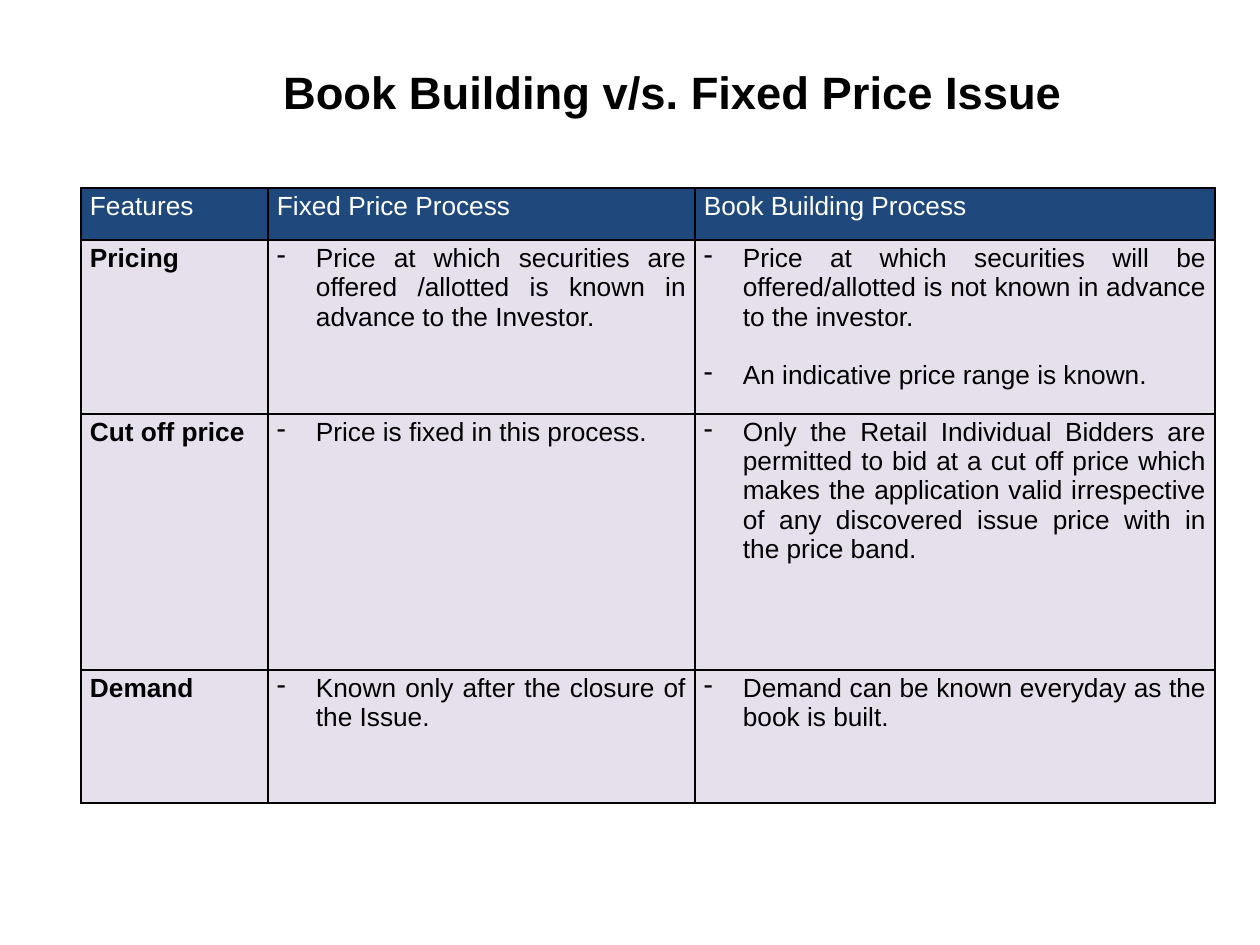
from lxml import etree
from pptx import Presentation, util as u
from pptx.dml.color import RGBColor
from pptx.enum import text
from pptx.oxml import ns

TITLE = "Book Building v/s. Fixed Price Issue"
HEADER = ["Features", "Fixed Price Process", "Book Building Process"]
ROWS = [
    ("Pricing",
     ["Price at which securities are offered /allotted is known in advance to the Investor."],
     ["Price at which securities will be offered/allotted is not known in advance to the investor.",
      "An indicative price range is known."]),
    ("Cut off price",
     ["Price is fixed in this process."],
     ["Only the Retail Individual Bidders are permitted to bid at a cut off price which makes "
      "the application valid irrespective of any discovered issue price with in the price band."]),
    ("Demand",
     ["Known only after the closure of the Issue."],
     ["Demand can be known everyday as the book is built."]),
]
COLS = [187, 427, 520]
HEIGHTS = [52, 174, 256, 133]
LEFT, TOP = 81, 188
BLACK, WHITE, NAVY, LILAC = "000000", "FFFFFF", "1F497D", "E6E0EC"


def px(n):
    return u.Emu(round(n * 914400 / 126))


def color(value):
    return RGBColor.from_string(value)


def add_run(p, words, size, ink, bold=False):
    r = p.add_run()
    r.text = words
    r.font.name, r.font.size, r.font.bold = "Arial", u.Pt(size), bold
    r.font.color.rgb = color(ink)


def add_dash(p):
    pPr = p._p.get_or_add_pPr()
    pPr.set("marL", str(px(39)))
    pPr.set("indent", str(-px(39)))
    etree.SubElement(pPr, ns.qn("a:buChar"), char="-")


def add_borders(cell):
    tcPr = cell._tc.get_or_add_tcPr()
    for side in ("lnL", "lnR", "lnT", "lnB"):
        ln = etree.SubElement(tcPr, ns.qn(f"a:{side}"), w=str(u.Pt(1)))
        fill = etree.SubElement(ln, ns.qn("a:solidFill"))
        etree.SubElement(fill, ns.qn("a:srgbClr"), val=BLACK)


def fill_cell(cell, lines, back, ink, bold=False, dashed=False):
    add_borders(cell)
    cell.fill.solid()
    cell.fill.fore_color.rgb = color(back)
    cell.margin_left = cell.margin_right = px(9)
    cell.margin_top = cell.margin_bottom = px(4)
    tf = cell.text_frame
    for i, line in enumerate(lines):
        p = tf.add_paragraph() if i else tf.paragraphs[0]
        p.alignment = text.PP_ALIGN.JUSTIFY
        if i:
            p.space_before = u.Pt(16.6)
        if dashed:
            add_dash(p)
        add_run(p, line, 15, ink, bold)


def add_title(s):
    tf = s.shapes.add_textbox(px(209), px(58), px(927), px(67)).text_frame
    tf.word_wrap = True
    p = tf.paragraphs[0]
    p.alignment = text.PP_ALIGN.CENTER
    add_run(p, TITLE, 25.9, BLACK, True)


def add_comparison(s):
    table = s.shapes.add_table(len(HEIGHTS), len(COLS), px(LEFT), px(TOP),
                               px(sum(COLS)), px(sum(HEIGHTS))).table
    for column, width in zip(table.columns, COLS):
        column.width = px(width)
    for row, height in zip(table.rows, HEIGHTS):
        row.height = px(height)
    for c, heading in enumerate(HEADER):
        fill_cell(table.cell(0, c), [heading], NAVY, WHITE)
    for n, (feature, *processes) in enumerate(ROWS, 1):
        fill_cell(table.cell(n, 0), [feature], LILAC, BLACK, bold=True)
        for c, lines in enumerate(processes, 1):
            fill_cell(table.cell(n, c), lines, LILAC, BLACK, dashed=True)


def main():
    """Build the slide comparing book building with fixed price issues."""
    prs = Presentation()
    prs.slide_width, prs.slide_height = px(1260), px(945)
    s = prs.slides.add_slide(prs.slide_layouts[6])
    add_title(s)
    add_comparison(s)
    prs.save("out.pptx")


if __name__ == "__main__":
    main()
